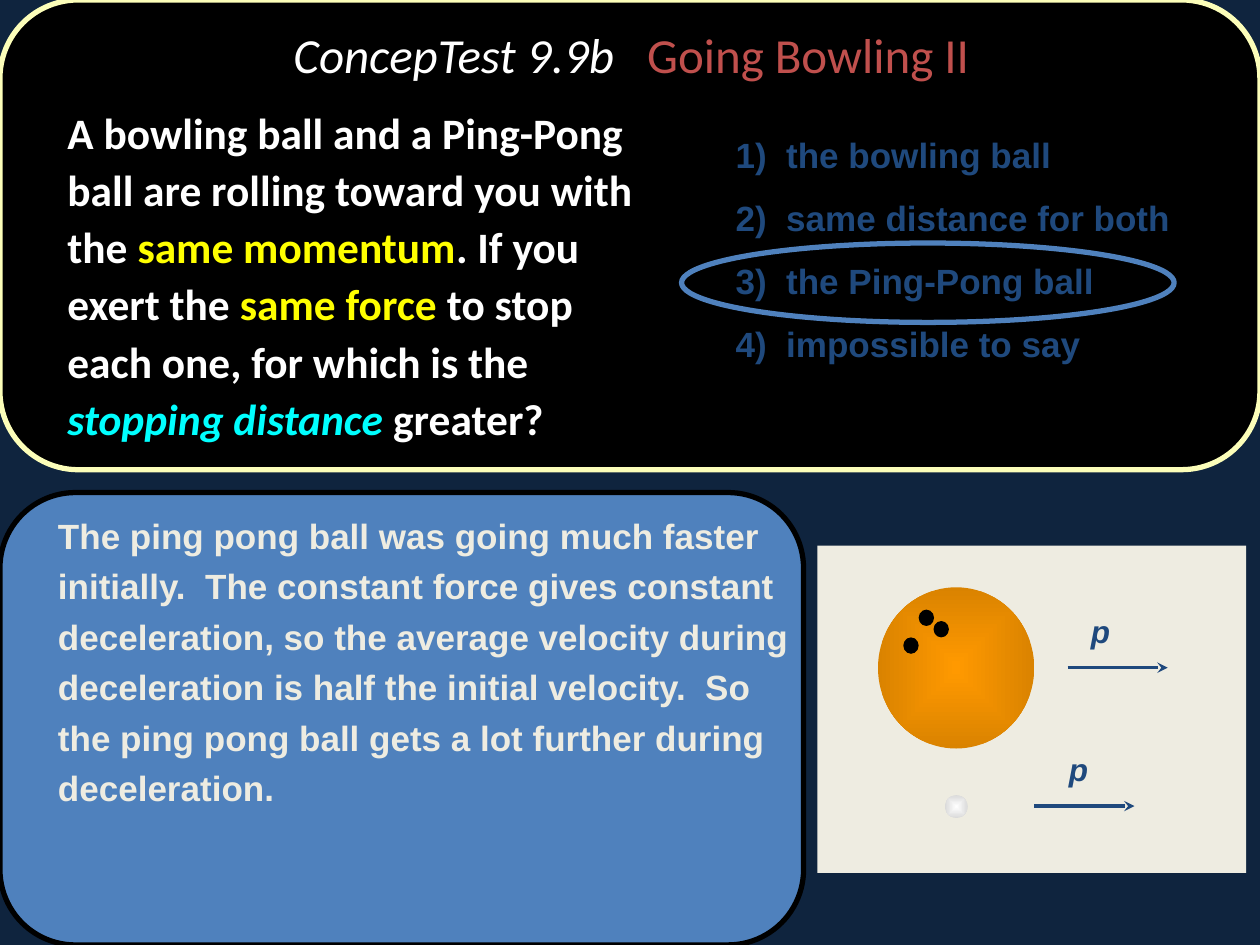
from dataclasses import dataclass

from lxml import etree
from pptx import Presentation
from pptx.dml.color import RGBColor
from pptx.enum.shapes import MSO_CONNECTOR, MSO_SHAPE
from pptx.enum.text import MSO_ANCHOR, PP_ALIGN
from pptx.oxml import parse_xml
from pptx.oxml.ns import nsdecls, qn
from pptx.util import Cm, Pt

STRAIGHT = MSO_CONNECTOR.STRAIGHT
OVAL = MSO_SHAPE.OVAL
RECTANGLE = MSO_SHAPE.RECTANGLE
ROUNDED = MSO_SHAPE.ROUNDED_RECTANGLE
MIDDLE = MSO_ANCHOR.MIDDLE
TOP = MSO_ANCHOR.TOP
CENTER = PP_ALIGN.CENTER
LEFT = PP_ALIGN.LEFT


@dataclass(frozen=True)
class Theme:
    navy: str = "0F243E"
    black: str = "000000"
    white: str = "FFFFFF"
    cream: str = "FCFEB9"
    paper: str = "EEECE1"
    blue: str = "4F81BD"
    ink: str = "1F497D"
    red: str = "C0504D"
    yellow: str = "FFFF00"
    cyan: str = "00FFFF"
    orange: tuple = ("FF9900", "DA8300")
    silver: tuple = ("FFFFFF", "DADADA")
    heading: str = "Calibri"
    body: str = "Arial"
    title_size: float = 28
    question_size: float = 24.8
    text_size: float = 20
    label_size: float = 18


theme = Theme()


def add_shape(shapes, kind, place, fill=None, line=None):
    """Add a flat preset shape; a pair of colours gives a gradient from the middle."""
    shape = shapes.add_shape(kind, *map(Cm, place))
    shape.shadow.inherit = False
    if isinstance(fill, tuple):
        inner, outer = fill
        gradient = parse_xml(
            f'<a:gradFill {nsdecls("a")} rotWithShape="1"><a:gsLst>'
            f'<a:gs pos="0"><a:srgbClr val="{inner}"/></a:gs>'
            f'<a:gs pos="100000"><a:srgbClr val="{outer}"/></a:gs></a:gsLst>'
            '<a:path path="shape"><a:fillToRect l="50000" t="50000" r="50000" b="50000"/>'
            '</a:path></a:gradFill>')
        shape._element.spPr.find(qn("a:prstGeom")).addnext(gradient)
    elif fill:
        shape.fill.solid()
        shape.fill.fore_color.rgb = RGBColor.from_string(fill)
    else:
        shape.fill.background()
    if line:
        shape.line.color.rgb = RGBColor.from_string(line)
        shape.line.width = Pt(3)
    else:
        shape.line.fill.background()
    return shape


def add_text(shapes, place, paragraphs, font, size, bold=True, spacing=1.0,
             margin=0, gap=0, align=LEFT, anchor=TOP, wrap=True):
    """Add a text box; each paragraph is a list of (text, colour, italic)."""
    box = shapes.add_textbox(*map(Cm, place))
    frame = box.text_frame
    frame.word_wrap = wrap
    frame.vertical_anchor = anchor
    for index, spans in enumerate(paragraphs):
        para = frame.add_paragraph() if index else frame.paragraphs[0]
        para.alignment = align
        para.line_spacing = spacing
        para.space_before = Pt(gap if index else 0)
        para._p.get_or_add_pPr().set("marL", str(Cm(margin)))
        for text, colour, italic in spans:
            span = para.add_run()
            span.text = text
            span.font.name = font
            span.font.size = Pt(size)
            span.font.bold = bold
            span.font.italic = italic
            span.font.color.rgb = RGBColor.from_string(colour)


deck = Presentation()
deck.slide_width, deck.slide_height = Cm(25.4), Cm(19.05)
page = deck.slides.add_slide(deck.slide_layouts[6])
page.background.fill.solid()
page.background.fill.fore_color.rgb = RGBColor.from_string(theme.navy)

# Panels
add_shape(page.shapes, ROUNDED, (0, 9.93, 16.2, 9.12), theme.blue, theme.black)
add_shape(page.shapes, ROUNDED, (0, 0, 25.4, 9.47), theme.black, theme.cream)

# Title
add_text(page.shapes, (2.59, 0, 20.27, 2.34),
         [[("ConcepTest 9.9b   ", theme.white, True), ("Going Bowling II", theme.red, False)]],
         theme.heading, theme.title_size, bold=False, spacing=0.9, align=CENTER, anchor=MIDDLE)

# Ring around the right answer
add_shape(page.shapes, OVAL, (13.74, 4.9, 9.93, 1.6), line=theme.blue)

# Diagram: two balls with equal momentum
diagram = page.shapes.add_group_shape().shapes
add_shape(diagram, RECTANGLE, (16.48, 11, 8.64, 6.6), theme.paper)
add_shape(diagram, OVAL, (19.05, 16.03, 0.46, 0.46), theme.silver)
add_shape(diagram, OVAL, (17.7, 11.84, 3.15, 3.25), theme.orange)
for left, top in ((18.52, 12.29), (18.82, 12.52), (18.21, 12.85)):
    add_shape(diagram, OVAL, (left, top, 0.31, 0.33), theme.black)

# Momentum arrows with their labels
for arrow_left, arrow_top, label_left, label_top in ((21.52, 13.46, 21.74, 12.29),
                                                     (20.85, 16.25, 21.3, 15.08)):
    arrow = diagram.add_connector(STRAIGHT, Cm(arrow_left), Cm(arrow_top),
                                  Cm(arrow_left + 2.02), Cm(arrow_top))
    arrow.line.color.rgb = RGBColor.from_string(theme.ink)
    arrow.line.width = Pt(2)
    etree.SubElement(arrow.line._get_or_add_ln(), qn("a:tailEnd"), type="stealth")
    etree.SubElement(arrow._element.spPr, qn("a:effectLst"))
    add_text(diagram, (label_left, label_top, 1.27, 1.17), [[("p", theme.ink, True)]],
             theme.body, theme.label_size, spacing=0.9, wrap=False)

# Explanation
explanation = (
    "The ping pong ball was going much faster initially.  The constant force gives "
    "constant deceleration, so the average velocity during deceleration is half the "
    "initial velocity.  So the ping pong ball gets a lot further during deceleration.")
add_text(page.shapes, (0.13, 10.08, 16.23, 6.43), [[(explanation, theme.paper, False)]],
         theme.body, theme.text_size, spacing=1.2, margin=0.79)

# Question
question = [
    ("A bowling ball and a Ping-Pong ball are rolling toward you with the ", theme.white, False),
    ("same momentum", theme.yellow, False),
    (". If you exert the ", theme.white, False),
    ("same force", theme.yellow, False),
    (" to stop each one, for which is the ", theme.white, False),
    ("stopping distance", theme.cyan, True),
    (" greater?", theme.white, False),
]
add_text(page.shapes, (0, 1.9, 13.49, 7.32), [question],
         theme.heading, theme.question_size, spacing=1.1, margin=1.11)

# Answers
answers = ("the bowling ball", "same distance for both", "the Ping-Pong ball",
           "impossible to say")
add_text(page.shapes, (14.58, 2.39, 10.8, 5.16),
         [[(f"{number})  {answer}", theme.ink, False)]
          for number, answer in enumerate(answers, 1)],
         theme.body, theme.text_size, spacing=1.2, gap=7.2)

deck.save("out.pptx")
